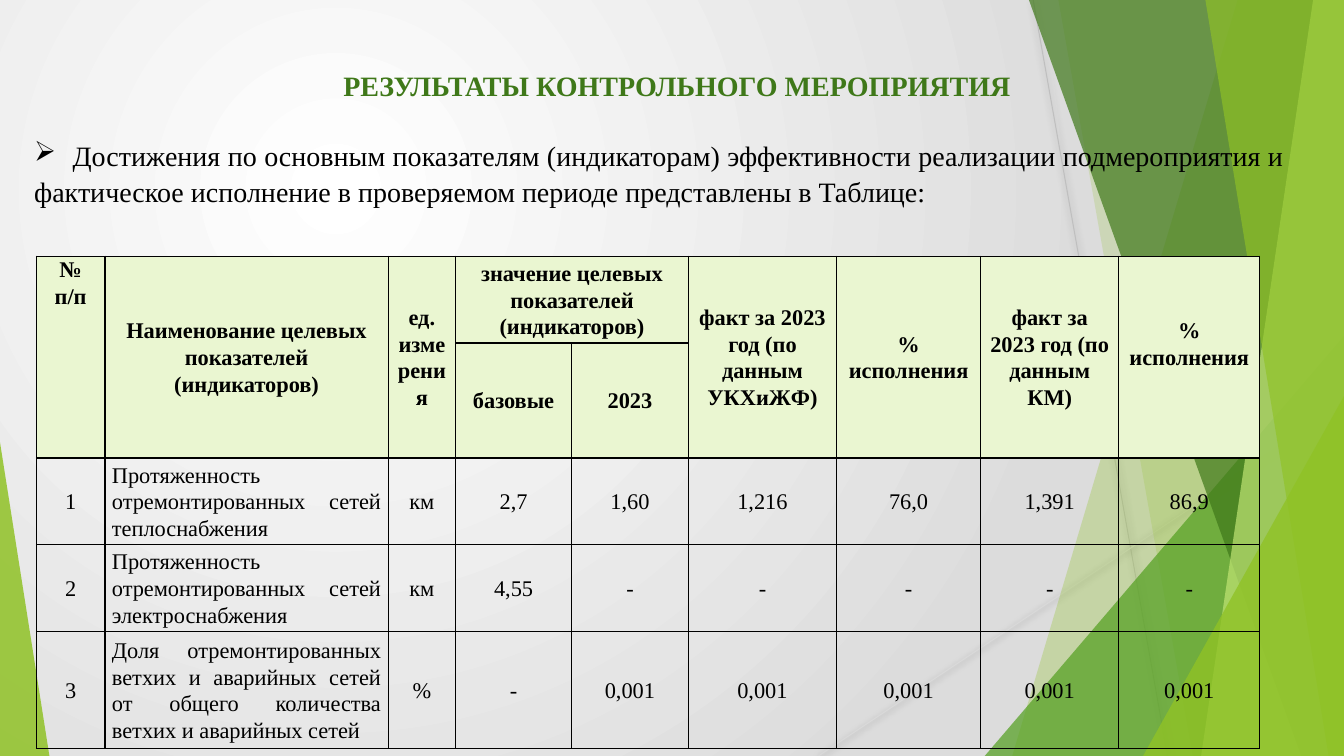
import pptx
import pptx.dml.color
import pptx.enum.shapes
import pptx.enum.text
import pptx.oxml
import pptx.oxml.ns
import pptx.util

Pt = pptx.util.Pt
RGBColor = pptx.dml.color.RGBColor
ALIGN = pptx.enum.text.PP_ALIGN
ANCHOR = pptx.enum.text.MSO_ANCHOR
qn = pptx.oxml.ns.qn

WHITE = RGBColor(0xFF, 0xFF, 0xFF)
BLACK = RGBColor(0, 0, 0)
BACKDROP_GREY = RGBColor(0xDC, 0xDC, 0xDC)
RAY_GREY = RGBColor(0xBF, 0xBF, 0xBF)
PALE_RAY_GREY = RGBColor(0xD9, 0xD9, 0xD9)
GREEN = RGBColor(0x90, 0xC2, 0x26)
MID_GREEN = RGBColor(0x54, 0xA0, 0x21)
DARK_GREEN = RGBColor(0x3F, 0x78, 0x19)
LIGHT_GREEN = RGBColor(0xC0, 0xE4, 0x74)
HEADER_GREEN = RGBColor(0xEA, 0xF6, 0xD1)

WIDTH, HEIGHT = 960, 540
LINE_SPACING = 1.07
HEADING = {"size": Pt(20), "name": "Times New Roman", "bold": True}
BODY = {**HEADING, "bold": False}
CELL = {**BODY, "size": Pt(16)}
HEADER_CELL = {**CELL, "bold": True}

RAYS = [
    ((738, 0), (834, HEIGHT), RAY_GREY),
    ((WIDTH, 290), (584.6, HEIGHT), PALE_RAY_GREY),
]
LOWER_BANDS = [
    (884, 723, GREEN, 30),
    (756, 852, GREEN, 20),
]
UPPER_BANDS = [
    (735, 929.5, DARK_GREEN, 70),
    (938, 858, LIGHT_GREEN, 70),
    (861, 949, GREEN, 65),
]

COLUMN_WIDTHS = [49, 202.3, 48.2, 82.8, 83.5, 105.8, 103, 98.6, 100.8]
ROW_HEIGHTS = [62, 82, 62, 62, 83.5]
HEADERS = {
    (0, 0): "№ п/п",
    (0, 1): "Наименование целевых показателей (индикаторов)",
    (0, 2): "ед.\nизмерения",
    (0, 3): "значение целевых показателей (индикаторов)",
    (0, 5): "факт за 2023 год (по данным УКХиЖФ)",
    (0, 6): "% исполнения",
    (0, 7): "факт за 2023 год (по данным КМ)",
    (0, 8): "% исполнения",
    (1, 3): "базовые",
    (1, 4): "2023",
}
INDICATORS = [
    ["1", "Протяженность отремонтированных сетей теплоснабжения", "км",
     "2,7", "1,60", "1,216", "76,0", "1,391", "86,9"],
    ["2", "Протяженность отремонтированных сетей электроснабжения", "км",
     "4,55"] + ["-"] * 5,
    ["3", "Доля отремонтированных ветхих и аварийных сетей от общего "
     "количества ветхих и аварийных сетей", "%", "-"] + ["0,001"] * 5,
]


def add_xml(parent, tag, **attributes):
    child = parent.makeelement(qn(tag), attributes)
    parent.append(child)
    return child


def format_text(frame, font_format, color, align, spacing=1.0):
    for paragraph in frame.paragraphs:
        paragraph.alignment = align
        paragraph.line_spacing = spacing
        for run in paragraph.runs:
            for attribute, value in font_format.items():
                setattr(run.font, attribute, value)
            run.font.color.rgb = color


def paint_background(slide):
    fill = slide.background.fill
    fill.gradient()
    for stop, color, position in zip(fill.gradient_stops, (WHITE, BACKDROP_GREY), (0, 1)):
        stop.color.rgb = color
        stop.position = position
    gradient = slide.element.find(".//" + qn("a:gradFill"))
    gradient.remove(gradient.find(qn("a:lin")))
    circle = add_xml(gradient, "a:path", path="circle")
    add_xml(circle, "a:fillToRect", l="50000", t="50000", r="100000", b="100000")


def add_ray(slide, start, end, color):
    ray = slide.shapes.add_connector(
        pptx.enum.shapes.MSO_CONNECTOR.STRAIGHT, *map(Pt, start + end))
    ray.line.color.rgb = color
    ray.line.width = Pt(0.75)
    effects = add_xml(ray.element.spPr, "a:effectLst")
    shadow = add_xml(effects, "a:outerShdw", blurRad=str(Pt(5)), dist=str(Pt(1)),
                     dir="5400000", rotWithShape="0")
    add_xml(add_xml(shadow, "a:srgbClr", val=str(BLACK)), "a:alpha", val="32000")


def tint(shape, color, opacity):
    shape.shadow.inherit = False
    shape.line.fill.background()
    shape.fill.solid()
    shape.fill.fore_color.rgb = color
    add_xml(shape.element.spPr.find(".//" + qn("a:srgbClr")), "a:alpha",
            val=str(opacity * 1000))


def add_band(slide, top_x, bottom_x, color, opacity):
    outline = slide.shapes.build_freeform(Pt(top_x), 0)
    corners = [(WIDTH, 0), (WIDTH, HEIGHT), (bottom_x, HEIGHT)]
    outline.add_line_segments([(Pt(x), Pt(y)) for x, y in corners])
    tint(outline.convert_to_shape(), color, opacity)


def add_corner(slide, left, top, width, apex, color, opacity):
    corner = slide.shapes.add_shape(
        pptx.enum.shapes.MSO_SHAPE.ISOSCELES_TRIANGLE,
        Pt(left), Pt(top), Pt(width), Pt(HEIGHT - top))
    corner.adjustments[0] = apex
    tint(corner, color, opacity)


def add_heading(slide, text):
    heading = slide.shapes.title
    place = {"left": 42, "top": 45.5, "width": 883, "height": 30}
    for attribute, value in place.items():
        setattr(heading, attribute, Pt(value))
    heading.text_frame.text = text
    heading.text_frame.vertical_anchor = ANCHOR.TOP
    format_text(heading.text_frame, HEADING, DARK_GREEN, ALIGN.CENTER)
    slide.shapes.element.append(heading.element)


def add_statement(slide, text):
    statement = slide.shapes.add_textbox(Pt(17.3), Pt(93.5), Pt(907), Pt(57))
    frame = statement.text_frame
    frame.word_wrap = True
    frame.text = "\t" + text
    format_text(frame, BODY, BLACK, ALIGN.JUSTIFY, LINE_SPACING)
    properties = frame.paragraphs[0]._p.get_or_add_pPr()
    properties.set("marL", "0")
    properties.set("indent", "0")
    add_xml(properties, "a:buChar", char="➢")
    add_xml(add_xml(properties, "a:tabLst"), "a:tab", pos=str(Pt(27.4)), algn="l")


def add_borders(cell):
    properties = cell._tc.get_or_add_tcPr()
    for side in ("a:lnL", "a:lnR", "a:lnT", "a:lnB"):
        border = add_xml(properties, side, w=str(Pt(1)))
        add_xml(add_xml(border, "a:solidFill"), "a:srgbClr", val=str(BLACK))


def fill_cell(cell, text, font_format, align):
    margins = {"margin_left": 5, "margin_right": 5, "margin_top": 0, "margin_bottom": 0}
    for attribute, value in margins.items():
        setattr(cell, attribute, Pt(value))
    cell.vertical_anchor = ANCHOR.MIDDLE
    cell.text_frame.text = text
    format_text(cell.text_frame, font_format, BLACK, align, LINE_SPACING)


def add_indicator_table(slide):
    table = slide.shapes.add_table(
        len(ROW_HEIGHTS), len(COLUMN_WIDTHS), Pt(26), Pt(183),
        Pt(sum(COLUMN_WIDTHS)), Pt(sum(ROW_HEIGHTS))).table
    table.first_row = table.horz_banding = False
    for column, width in zip(table.columns, COLUMN_WIDTHS):
        column.width = Pt(width)
    for row, height in zip(table.rows, ROW_HEIGHTS):
        row.height = Pt(height)
    for position, cell in enumerate(table.iter_cells()):
        add_borders(cell)
        if position < 2 * len(COLUMN_WIDTHS):
            cell.fill.solid()
            cell.fill.fore_color.rgb = HEADER_GREEN
        else:
            cell.fill.background()
    for column in (0, 1, 2, 5, 6, 7, 8):
        table.cell(0, column).merge(table.cell(1, column))
    table.cell(0, 3).merge(table.cell(0, 4))
    for place, text in HEADERS.items():
        fill_cell(table.cell(*place), text, HEADER_CELL, ALIGN.CENTER)
    table.cell(0, 0).vertical_anchor = ANCHOR.TOP
    table.cell(0, 8).margin_bottom = Pt(19.7)
    for row, values in enumerate(INDICATORS, start=2):
        for column, text in enumerate(values):
            align = ALIGN.JUSTIFY if column == 1 else ALIGN.CENTER
            fill_cell(table.cell(row, column), text, CELL, align)


def main():
    deck = pptx.Presentation()
    deck.slide_width, deck.slide_height = Pt(WIDTH), Pt(HEIGHT)
    slide = deck.slides.add_slide(deck.slide_layouts[5])
    paint_background(slide)
    for ray in RAYS:
        add_ray(slide, *ray)
    for band in LOWER_BANDS:
        add_band(slide, *band)
    add_corner(slide, 703.4, 240, 256.6, 1, MID_GREEN, 72)
    for band in UPPER_BANDS:
        add_band(slide, *band)
    add_corner(slide, 816.5, 283, 143.5, 1, GREEN, 80)
    add_corner(slide, 0, 316, 35.3, 0, GREEN, 85)
    add_heading(slide, "РЕЗУЛЬТАТЫ КОНТРОЛЬНОГО МЕРОПРИЯТИЯ")
    add_statement(slide, "Достижения по основным показателям (индикаторам) эффективности "
                  "реализации подмероприятия и фактическое исполнение в проверяемом "
                  "периоде представлены в Таблице:")
    add_indicator_table(slide)
    deck.save("out.pptx")


if __name__ == "__main__":
    main()
